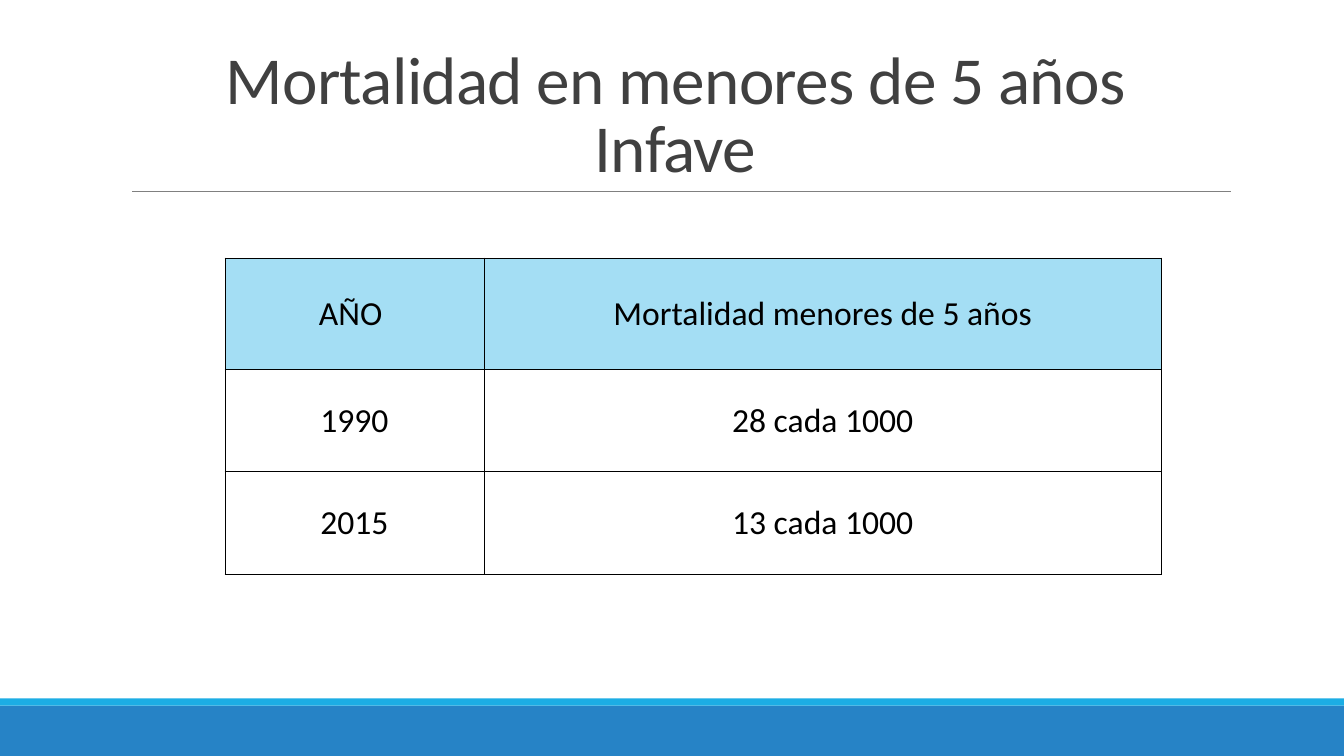
from pptx import Presentation
from pptx.dml.color import RGBColor
from pptx.enum import shapes, text
from pptx.oxml import parse_xml
from pptx.oxml.ns import nsdecls
from pptx.util import Inches, Pt

BLUE = RGBColor(0x26, 0x83, 0xC6)
CYAN = RGBColor(0x1C, 0xAD, 0xE4)
PALE_BLUE = RGBColor(0xA4, 0xDE, 0xF4)
GRAY = RGBColor(0x80, 0x80, 0x80)
DARK_GRAY = RGBColor(0x40, 0x40, 0x40)
BLACK = RGBColor(0, 0, 0)

TITLE = ["Mortalidad en menores de 5 años", "Infave"]
COL_WIDTHS = [2.57, 6.72]
ROW_HEIGHTS = [1.1, 1.02, 1.02]
ROWS = [
    ["AÑO ", "Mortalidad menores de 5 años"],
    ["1990", "28 cada 1000"],
    ["2015", "13 cada 1000"],
]


def style_paragraph(p, size, color):
    p.alignment = text.PP_ALIGN.CENTER
    p.font.name = "Calibri"
    p.font.size = Pt(size)
    p.font.color.rgb = color


def add_band(s, top, height, color):
    sp = s.shapes.add_shape(shapes.MSO_SHAPE.RECTANGLE, 0, Inches(top),
                            Inches(13.33), Inches(height))
    sp.shadow.inherit = False
    sp.fill.solid()
    sp.fill.fore_color.rgb = color
    sp.line.fill.background()


def add_rule(s, left, right, y):
    line = s.shapes.add_connector(shapes.MSO_CONNECTOR.STRAIGHT, Inches(left),
                                  Inches(y), Inches(right), Inches(y))
    line.line.color.rgb = GRAY
    line.line.width = Pt(0.5)
    line._element.spPr.append(parse_xml(f"<a:effectLst {nsdecls('a')}/>"))


def add_title(s, lines):
    tf = s.shapes.add_textbox(Inches(1.2), Inches(0.31),
                              Inches(11), Inches(1.59)).text_frame
    tf.word_wrap = True
    tf.vertical_anchor = text.MSO_ANCHOR.BOTTOM
    p = tf.paragraphs[0]
    style_paragraph(p, 48, DARK_GRAY)
    p.line_spacing = 0.85
    for i, line in enumerate(lines):
        if i:
            p.add_line_break()
        r = p.add_run()
        r.text = line
        r.font._element.set("spc", "-50")


def add_borders(cell):
    """Draw a thin black line on all four sides of the cell."""
    tcPr = cell._tc.get_or_add_tcPr()
    for i, side in enumerate(("lnL", "lnR", "lnT", "lnB")):
        tcPr.insert(i, parse_xml(
            f'<a:{side} {nsdecls("a")} w="{Pt(0.5)}"><a:solidFill>'
            f'<a:srgbClr val="{BLACK}"/></a:solidFill></a:{side}>'))


def fill_cell(cell, value, is_header):
    cell.text = value
    cell.vertical_anchor = text.MSO_ANCHOR.MIDDLE
    cell.margin_left = cell.margin_right = cell.margin_top = Inches(0.01)
    cell.margin_bottom = 0
    style_paragraph(cell.text_frame.paragraphs[0], 24, BLACK)
    if is_header:
        cell.fill.solid()
        cell.fill.fore_color.rgb = PALE_BLUE
    else:
        cell.fill.background()
    add_borders(cell)


def add_mortality_table(s):
    table = s.shapes.add_table(
        len(ROWS), len(COL_WIDTHS), Inches(2.23), Inches(2.56),
        Inches(sum(COL_WIDTHS)), Inches(sum(ROW_HEIGHTS))).table
    table.horz_banding = False
    table.first_row = False
    for column, width in zip(table.columns, COL_WIDTHS):
        column.width = Inches(width)
    for i, (row, height) in enumerate(zip(table.rows, ROW_HEIGHTS)):
        row.height = Inches(height)
        for cell, value in zip(row.cells, ROWS[i]):
            fill_cell(cell, value, is_header=i == 0)


def main():
    prs = Presentation()
    prs.slide_width, prs.slide_height = Inches(13.33), Inches(7.5)
    s = prs.slides.add_slide(prs.slide_layouts[6])
    add_band(s, 7, 0.5, BLUE)
    add_band(s, 6.93, 0.07, CYAN)
    add_rule(s, 1.31, 12.21, 1.9)
    add_title(s, TITLE)
    add_mortality_table(s)
    prs.save("out.pptx")


if __name__ == "__main__":
    main()
